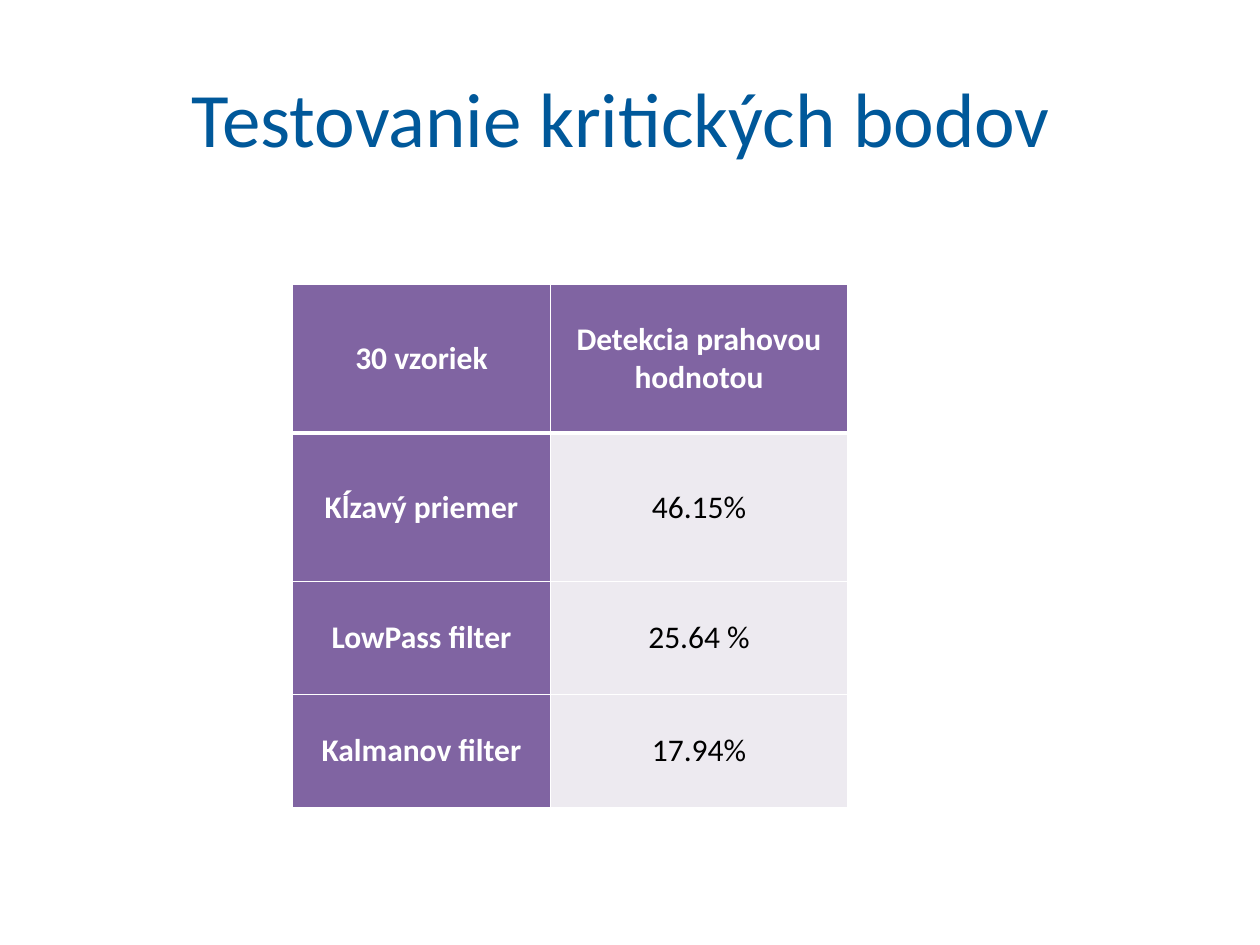
from dataclasses import dataclass

from lxml import etree
from pptx import Presentation
from pptx import util as u
from pptx.dml.color import RGBColor
from pptx.enum import text
from pptx.oxml.ns import qn


@dataclass(frozen=True)
class Theme:
    font: str = "Calibri"
    title_size: float = 44
    cell_size: float = 18
    title: str = "00589A"
    header: str = "8064A2"
    body: str = "EDEAF0"
    light: str = "FFFFFF"
    dark: str = "000000"
    thin: float = 1
    thick: float = 3


class SlideBuilder:
    def __init__(self, prs, theme):
        self.theme = theme
        self.s = prs.slides.add_slide(prs.slide_layouts[5])

    def set_text(self, tf, content, size, color, bold=False):
        p = tf.paragraphs[0]
        p.alignment = text.PP_ALIGN.CENTER
        r = p.add_run()
        r.text = content
        fmt = {"name": self.theme.font, "size": u.Pt(size), "bold": bold}
        for key, value in fmt.items():
            setattr(r.font, key, value)
        r.font.color.rgb = RGBColor.from_string(color)

    def title(self, content, left, top, width, height):
        sp = self.s.shapes.title
        box = {"left": left, "top": top, "width": width, "height": height}
        for key, value in box.items():
            setattr(sp, key, u.Pt(value))
        sp.text_frame.vertical_anchor = text.MSO_ANCHOR.MIDDLE
        self.set_text(sp.text_frame, content, self.theme.title_size, self.theme.title)

    def borders(self, cell, widths):
        # Border lines come before the fill in the cell properties
        tc_pr = cell._tc.get_or_add_tcPr()
        for i, (side, width) in enumerate(widths.items()):
            ln = etree.Element(qn(f"a:ln{side}"), w=str(u.Pt(width)))
            fill = etree.SubElement(ln, qn("a:solidFill"))
            etree.SubElement(fill, qn("a:srgbClr"), val=self.theme.light)
            tc_pr.insert(i, ln)

    def table(self, rows, left, top, col_widths, row_heights):
        t = self.theme
        tbl = self.s.shapes.add_table(
            len(rows), len(col_widths), u.Pt(left), u.Pt(top),
            u.Pt(sum(col_widths)), u.Pt(sum(row_heights))).table
        tbl.first_col = True
        for col, width in zip(tbl.columns, col_widths):
            col.width = u.Pt(width)
        for i, (values, height) in enumerate(zip(rows, row_heights)):
            tbl.rows[i].height = u.Pt(height)
            for j, value in enumerate(values):
                cell = tbl.cell(i, j)
                head = i == 0 or j == 0
                cell.fill.solid()
                cell.fill.fore_color.rgb = RGBColor.from_string(t.header if head else t.body)
                cell.vertical_anchor = text.MSO_ANCHOR.MIDDLE
                self.set_text(cell.text_frame, value, t.cell_size,
                              t.light if head else t.dark, bold=head)
                self.borders(cell, {"L": t.thin, "R": t.thin,
                                    "T": t.thick if i == 1 else t.thin,
                                    "B": t.thick if i == 0 else t.thin})


def main():
    prs = Presentation()
    prs.slide_width, prs.slide_height = u.Pt(720), u.Pt(540)
    slide = SlideBuilder(prs, Theme())

    # Title
    slide.title("Testovanie kritických bodov ", 36, 21.6, 648, 90)

    # Detection results
    slide.table([("30 vzoriek", "Detekcia prahovou hodnotou"),
                 ("Kĺzavý priemer", "46.15%"),
                 ("LowPass filter", "25.64 %"),
                 ("Kalmanov filter", "17.94%")],
                left=167.2, top=162.4,
                col_widths=(147.4, 169.8), row_heights=(85, 85, 64.6, 64.6))

    prs.save("out.pptx")


if __name__ == "__main__":
    main()
